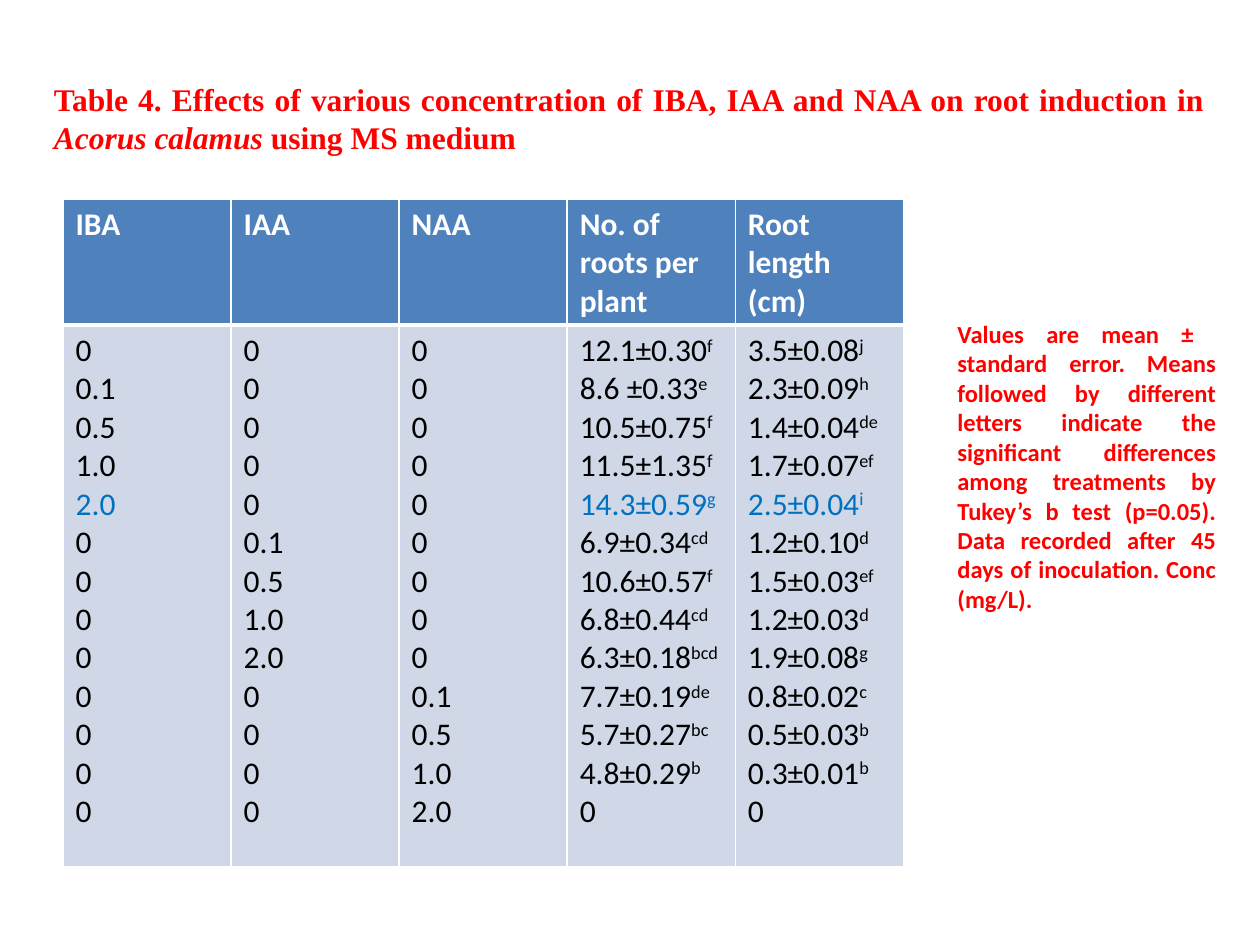
from dataclasses import dataclass

from lxml.etree import SubElement
from pptx import Presentation
from pptx.dml.color import RGBColor as RGB
from pptx.enum.text import MSO_ANCHOR as ANCHOR, MSO_AUTO_SIZE as AUTOSIZE, PP_ALIGN as ALIGN
from pptx.oxml.ns import qn
from pptx.util import Inches, Pt


@dataclass(frozen=True)
class Theme:
    red: str = "FF0000"
    blue: str = "0070C0"
    black: str = "000000"
    white: str = "FFFFFF"
    head: str = "4F81BD"
    body: str = "D0D8E8"
    serif: str = "Times New Roman"
    sans: str = "Calibri"
    large: int = 18
    small: int = 14


HEADERS = ["IBA", "IAA", "NAA", "No. of roots per plant", "Root length (cm)"]
DOSES = ["0.1", "0.5", "1.0", "2.0"]
BEST = 4
ROOTS = ["12.1±0.30^f", "8.6 ±0.33^e", "10.5±0.75^f", "11.5±1.35^f", "14.3±0.59^g",
         "6.9±0.34^cd", "10.6±0.57^f", "6.8±0.44^cd", "6.3±0.18^bcd", "7.7±0.19^de",
         "5.7±0.27^bc", "4.8±0.29^b", "0"]
LENGTHS = ["3.5±0.08^j", "2.3±0.09^h", "1.4±0.04^de", "1.7±0.07^ef", "2.5±0.04^i",
           "1.2±0.10^d", "1.5±0.03^ef", "1.2±0.03^d", "1.9±0.08^g", "0.8±0.02^c",
           "0.5±0.03^b", "0.3±0.01^b", "0"]
NOTE = ("Values are mean ±  standard error. Means followed by different letters indicate "
        "the significant differences among treatments by Tukey’s b test (p=0.05). "
        "Data recorded after 45 days of inoculation. Conc (mg/L).")


class SlideBuilder:
    """Draws styled text and tables on the current slide."""

    def __init__(self, prs, theme):
        self.theme = theme
        self.slide = prs.slides.add_slide(prs.slide_layouts[6])

    def run(self, p, text, color, raised=False, **fmt):
        r = p.add_run()
        r.text = text
        values = {"name": self.theme.sans, "size": Pt(self.theme.large), "bold": False, **fmt}
        for name, value in values.items():
            setattr(r.font, name, value)
        r.font.color.rgb = RGB.from_string(color)
        if raised:
            r._r.get_or_add_rPr().set("baseline", "30000")

    def text(self, box, pieces, **fmt):
        tf = self.slide.shapes.add_textbox(*map(Inches, box)).text_frame
        for name, value in {"word_wrap": True, "vertical_anchor": ANCHOR.MIDDLE,
                            "auto_size": AUTOSIZE.SHAPE_TO_FIT_TEXT}.items():
            setattr(tf, name, value)
        p = tf.paragraphs[0]
        p.alignment = ALIGN.JUSTIFY
        for text, italic in pieces:
            self.run(p, text, self.theme.red, bold=True, italic=italic, **fmt)

    def borders(self, cell, widths):
        tcPr = cell._tc.get_or_add_tcPr()
        for i, (side, width) in enumerate(zip("LRTB", widths)):
            ln = SubElement(tcPr, qn(f"a:ln{side}"), w=str(Pt(width)))
            fill = SubElement(ln, qn("a:solidFill"))
            SubElement(fill, qn("a:srgbClr"), val=self.theme.white)
            tcPr.insert(i, ln)

    def cell(self, cell, lines, fill, color, widths, bold=False, accent=None):
        cell.fill.solid()
        cell.fill.fore_color.rgb = RGB.from_string(fill)
        self.borders(cell, widths)
        tf = cell.text_frame
        for i, line in enumerate(lines):
            p = tf.add_paragraph() if i else tf.paragraphs[0]
            value, _, letters = line.partition("^")
            shade = self.theme.blue if i == accent else color
            self.run(p, value, shade, bold=bold)
            if letters:
                self.run(p, letters, shade, raised=True, bold=bold)

    def table(self, box, heights, headers, columns, accents):
        t = self.theme
        table = self.slide.shapes.add_table(2, len(headers), *map(Inches, box)).table
        for row, height in zip(table.rows, heights):
            row.height = Inches(height)
        for c, (header, lines, accent) in enumerate(zip(headers, columns, accents)):
            self.cell(table.cell(0, c), [header], t.head, t.white, (1, 1, 1, 3), bold=True)
            self.cell(table.cell(1, c), lines, t.body, t.black, (1, 1, 3, 1), accent=accent)


def doses(start):
    return ["0"] * start + DOSES + ["0"] * (len(ROOTS) - start - len(DOSES))


def main():
    prs = Presentation()
    prs.slide_width, prs.slide_height = Inches(10), Inches(7.5)
    theme = Theme()
    s = SlideBuilder(prs, theme)
    s.text((0.33, 0.58, 9.33, 0.71), [
        ("Table 4. Effects of various concentration of IBA, IAA and NAA on root induction in ", False),
        ("Acorus calamus", True),
        (" using MS medium", False),
    ], name=theme.serif)
    columns = [doses(start) for start in (1, 5, 9)] + [ROOTS, LENGTHS]
    s.table((0.5, 1.58, 6.67, 5.3), (1, 4.3), HEADERS, columns, (BEST, None, None, BEST, BEST))
    s.text((7.5, 2.47, 2.25, 2.46), [(NOTE, False)], size=Pt(theme.small))
    prs.save("out.pptx")


if __name__ == "__main__":
    main()
